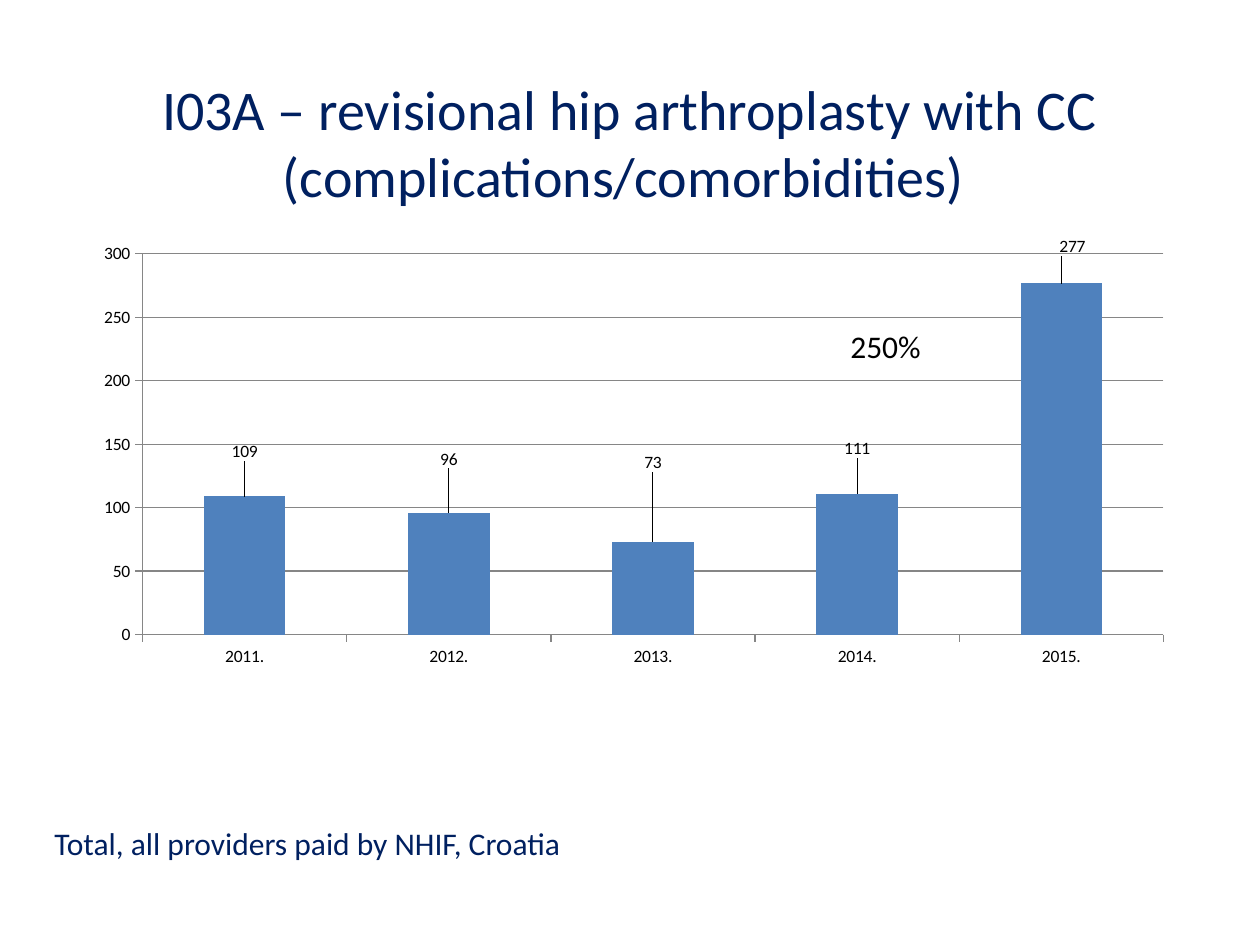
import pptx
import pptx.chart.data
import pptx.dml.color
import pptx.enum.chart
import pptx.enum.text
import pptx.oxml
import pptx.oxml.ns
import pptx.util

EMU_PER_PX = 914400 / 126
NAVY, BLACK, BLUE, GREY = "002060", "000000", "4F81BD", "868686"
PLOT_AREA = {"x": 0.072, "y": 0.028, "w": 0.924, "h": 0.879}
CASES = {"2011.": 109, "2012.": 96, "2013.": 73, "2014.": 111, "2015.": 277}
LABEL_SHIFTS = [(0, -0.07), (0, -0.09), (0, -0.15), (0, -0.07), (0.01, -0.05)]


def px(length):
    return round(length * EMU_PER_PX)


def color(value):
    return pptx.dml.color.RGBColor.from_string(value)


def assign(target, values):
    for name, value in values.items():
        setattr(target, name, value)


def manual_layout(values, inner=False):
    modes = {"layoutTarget": "inner", "xMode": "edge", "yMode": "edge"} if inner else {}
    parts = "".join(f'<c:{name} val="{value}"/>' for name, value in {**modes, **values}.items())
    return pptx.oxml.parse_xml(
        f'<c:layout {pptx.oxml.ns.nsdecls("c")}><c:manualLayout>{parts}</c:manualLayout></c:layout>'
    )


class SlideBuilder:
    """Holds the style and the current slide, and adds elements to it."""

    def __init__(self, deck, font="Calibri"):
        self.font = font
        self.slide = deck.slides.add_slide(deck.slide_layouts[6])

    def style(self, font, size, fill):
        assign(font, {"name": self.font, "size": pptx.util.Pt(size), "bold": False})
        font.color.rgb = color(fill)

    def text(self, area, words, size, fill, **frame_values):
        box = self.slide.shapes.add_textbox(*map(px, area))
        assign(box.text_frame, {"word_wrap": True, **frame_values})
        para = box.text_frame.paragraphs[0]
        span = para.add_run()
        span.text = words
        self.style(span.font, size, fill)
        return para

    def axis(self, axis, values):
        assign(axis, {"major_tick_mark": pptx.enum.chart.XL_TICK_MARK.OUTSIDE, **values})
        lines = [axis.format.line]
        if axis.has_major_gridlines:
            lines.append(axis.major_gridlines.format.line)
        for line in lines:
            line.color.rgb = color(GREY)
            line.width = pptx.util.Pt(0.75)

    def column_chart(self, area, name, values, label_shifts):
        data = pptx.chart.data.CategoryChartData()
        data.categories = list(values)
        data.add_series(name, list(values.values()))
        kind = pptx.enum.chart.XL_CHART_TYPE.COLUMN_CLUSTERED
        chart = self.slide.shapes.add_chart(kind, *map(px, area), data).chart
        assign(chart, {"has_legend": False, "has_title": False})
        self.style(chart.font, 10, BLACK)
        self.axis(chart.category_axis, {"has_major_gridlines": False})
        self.axis(chart.value_axis, {"has_major_gridlines": True, "minimum_scale": 0,
                                     "maximum_scale": 300, "major_unit": 50})
        plot = chart.plots[0]
        assign(plot, {"gap_width": 150, "vary_by_categories": False})
        plot_area = chart._chartSpace.chart.plotArea
        for layout in plot_area.xpath("c:layout"):
            plot_area.remove(layout)
        plot_area.insert(0, manual_layout(PLOT_AREA, inner=True))

        series = plot.series[0]
        series.format.fill.solid()
        series.format.fill.fore_color.rgb = color(BLUE)
        series.data_labels.show_value = True
        for index in range(len(values)):
            label = series.points[index].data_label
            self.style(label.font, 10, BLACK)
            label.position = pptx.enum.chart.XL_LABEL_POSITION.OUTSIDE_END
        for element, (x, y) in zip(plot_area.xpath(".//c:dLbl"), label_shifts):
            element.insert(1, manual_layout({"x": x, "y": y}))


def main():
    deck = pptx.Presentation()
    assign(deck, {"slide_width": px(1260), "slide_height": px(945)})
    builder = SlideBuilder(deck)
    builder.column_chart((63, 237, 1105, 438), "Series 1", CASES, LABEL_SHIFTS)
    grow = pptx.enum.text.MSO_AUTO_SIZE.SHAPE_TO_FIT_TEXT
    builder.text((42, 818, 631, 50), "Total, all providers paid by NHIF, Croatia", 18, NAVY,
                 auto_size=grow)
    builder.text((838, 321, 150, 50), "250%", 18, BLACK, auto_size=grow)
    title = builder.text((87, 50, 1086, 183),
                         "I03A – revisional hip arthroplasty with CC (complications/comorbidities) ",
                         32, NAVY, vertical_anchor=pptx.enum.text.MSO_ANCHOR.MIDDLE)
    title.alignment = pptx.enum.text.PP_ALIGN.CENTER
    deck.save("out.pptx")


if __name__ == "__main__":
    main()
